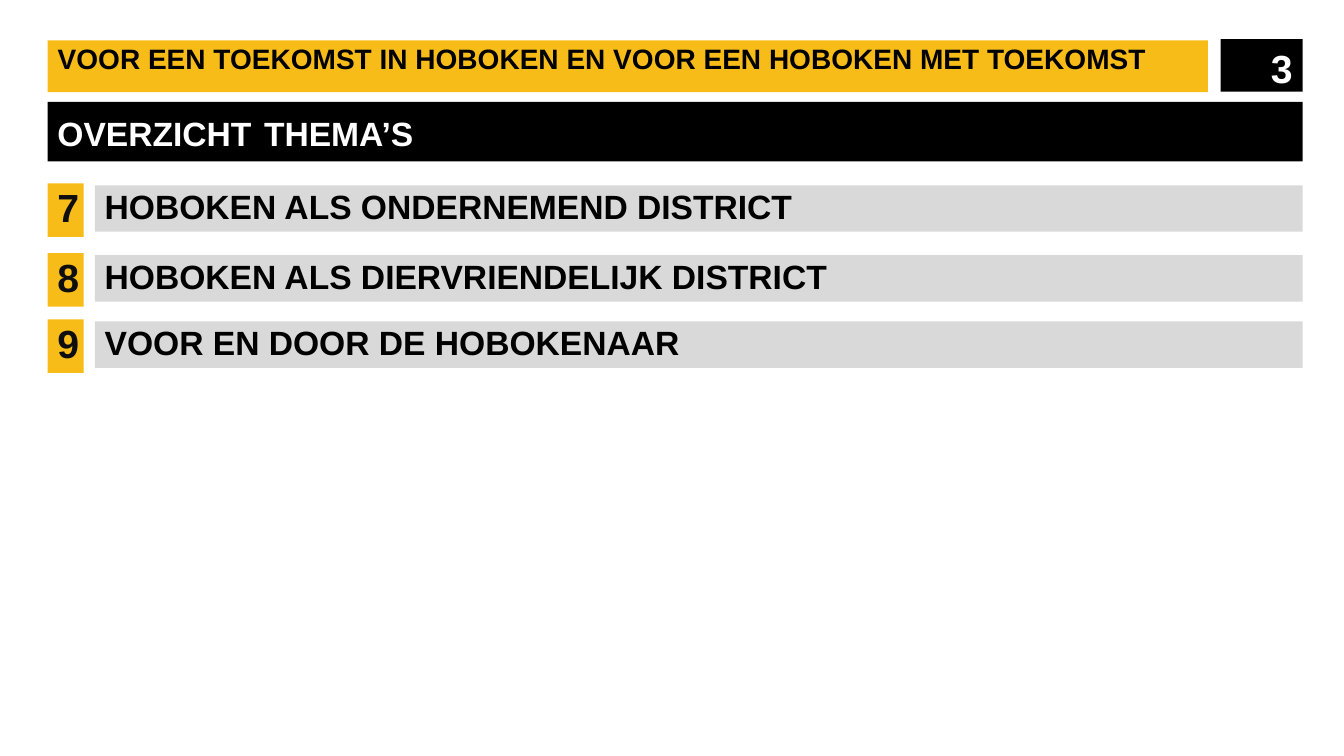
from dataclasses import dataclass

from pptx import Presentation
from pptx.dml.color import RGBColor
from pptx.enum.shapes import MSO_SHAPE
from pptx.enum.text import MSO_ANCHOR, MSO_AUTO_SIZE, PP_ALIGN
from pptx.util import Cm, Pt

SLOGAN = "VOOR EEN TOEKOMST IN HOBOKEN EN VOOR EEN HOBOKEN MET TOEKOMST"
PAGE = "3"
# Each heading part has its own type size.
HEADING = [("OVERZICHT", 24), (" ", 32), ("THEMA’S", 24)]
# Number, theme, top of the bar in cm
THEMES = [
    ("7", "HOBOKEN ALS ONDERNEMEND DISTRICT", 4.67),
    ("8", "HOBOKEN ALS DIERVRIENDELIJK DISTRICT", 6.43),
    ("9", "VOOR EN DOOR DE HOBOKENAAR", 8.1),
]


@dataclass(frozen=True)
class Theme:
    font: str = "Arial"
    yellow: str = "F8BC19"
    black: str = "000000"
    ink: str = "0E0E0E"
    grey: str = "D9D9D9"
    white: str = "FFFFFF"
    slogan_size: int = 20
    theme_size: int = 24
    number_size: int = 28


THEME = Theme()
LEFT, RIGHT = 1.2, 32.83
BADGE_WIDTH, BADGE_HEIGHT = 0.91, 1.35
BAR_LEFT, BAR_HEIGHT = 2.39, 1.17
BADGE_RISE = 0.05
PAGE_LEFT = 30.76


def write(shape, parts, color, align=PP_ALIGN.LEFT, anchor=MSO_ANCHOR.MIDDLE, spacing=0.9):
    """Fill a shape with one bold paragraph made of (text, size) parts."""
    frame = shape.text_frame
    frame.word_wrap = True
    frame.auto_size = MSO_AUTO_SIZE.NONE
    frame.vertical_anchor = anchor
    paragraph = frame.paragraphs[0]
    paragraph.alignment = align
    paragraph.line_spacing = spacing
    paragraph.space_before = Pt(0)
    for text, size in parts:
        run = paragraph.add_run()
        run.text = text
        run.font.name = THEME.font
        run.font.size = Pt(size)
        run.font.bold = True
        run.font.color.rgb = RGBColor.from_string(color)


def paint(shape, color):
    shape.fill.solid()
    shape.fill.fore_color.rgb = RGBColor.from_string(color)
    shape.line.fill.background()


def add_bar(slide, left, top, width, height, fill):
    bar = slide.shapes.add_shape(
        MSO_SHAPE.RECTANGLE, Cm(left), Cm(top), Cm(width), Cm(height))
    bar.shadow.inherit = False
    paint(bar, fill)
    return bar


def main():
    deck = Presentation()
    deck.slide_width, deck.slide_height = Cm(33.87), Cm(19.05)
    slide = deck.slides.add_slide(deck.slide_layouts[5])

    slogan = slide.shapes.title
    slogan.left, slogan.top = Cm(LEFT), Cm(1.02)
    slogan.width, slogan.height = Cm(29.24), Cm(1.3)
    paint(slogan, THEME.yellow)
    write(slogan, [(SLOGAN, THEME.slogan_size)], THEME.black, anchor=MSO_ANCHOR.TOP)

    page = add_bar(slide, PAGE_LEFT, 0.99, RIGHT - PAGE_LEFT, 1.32, THEME.black)
    write(page, [(PAGE, THEME.number_size)], THEME.white,
          align=PP_ALIGN.RIGHT, anchor=MSO_ANCHOR.TOP, spacing=1.0)

    heading = add_bar(slide, LEFT, 2.57, RIGHT - LEFT, 1.5, THEME.black)
    write(heading, HEADING, THEME.white)

    for number, name, top in THEMES:
        badge = add_bar(slide, LEFT, top - BADGE_RISE, BADGE_WIDTH, BADGE_HEIGHT, THEME.yellow)
        write(badge, [(number, THEME.number_size)], THEME.ink, align=PP_ALIGN.CENTER)
        bar = add_bar(slide, BAR_LEFT, top, RIGHT - BAR_LEFT, BAR_HEIGHT, THEME.grey)
        write(bar, [(name, THEME.theme_size)], THEME.black)

    deck.save("out.pptx")


if __name__ == "__main__":
    main()
